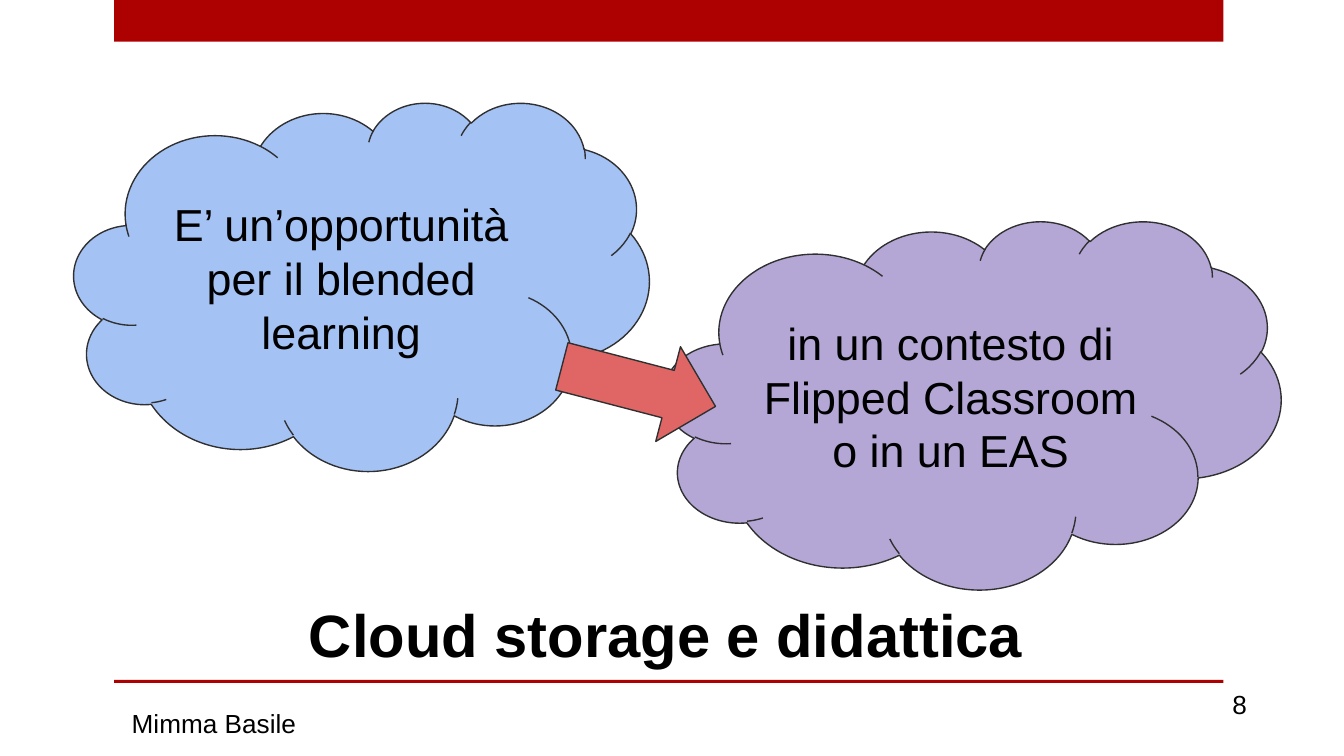
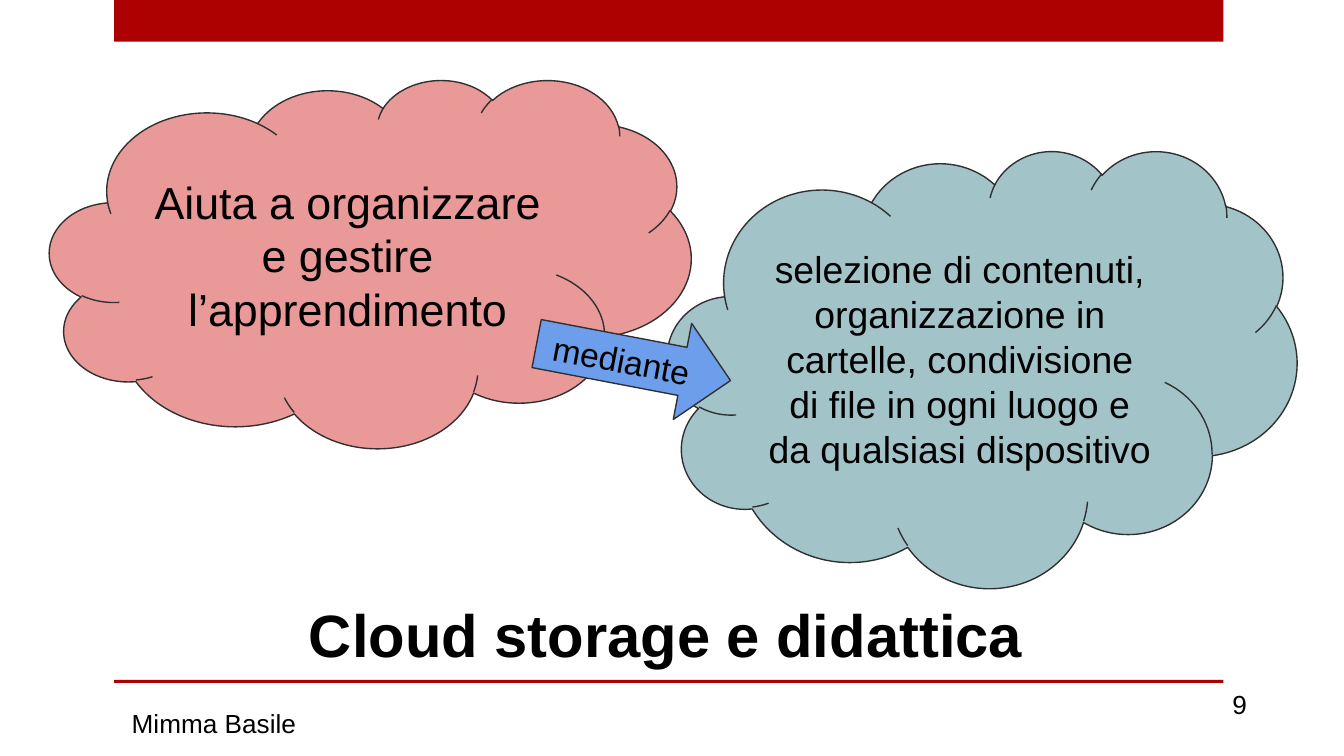
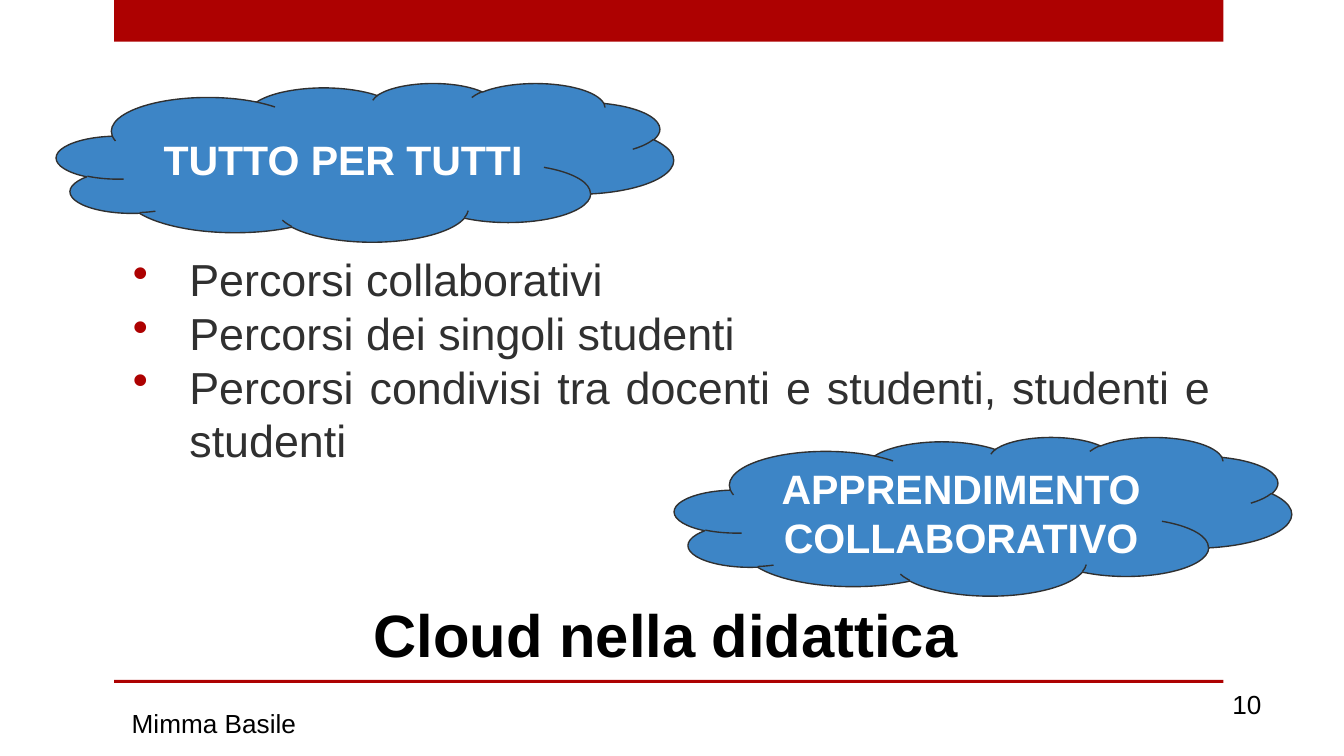
from dataclasses import dataclass

from lxml import etree
from pptx import Presentation
from pptx.dml.color import RGBColor
from pptx.enum.shapes import MSO_SHAPE
from pptx.enum.text import MSO_ANCHOR, MSO_AUTO_SIZE, PP_ALIGN
from pptx.oxml.ns import qn
from pptx.util import Cm, Pt

RECTANGLE, CLOUD, ARROW = MSO_SHAPE.RECTANGLE, MSO_SHAPE.CLOUD, MSO_SHAPE.RIGHT_ARROW
LEFT, CENTER, JUSTIFY = PP_ALIGN.LEFT, PP_ALIGN.CENTER, PP_ALIGN.JUSTIFY
TOP, MIDDLE, BOTTOM = MSO_ANCHOR.TOP, MSO_ANCHOR.MIDDLE, MSO_ANCHOR.BOTTOM


@dataclass(frozen=True)
class Theme:
    font: str = "Arial"
    accent: str = "AD0101"
    ink: str = "303030"
    black: str = "000000"
    white: str = "FFFFFF"
    light_blue: str = "A4C2F4"
    purple: str = "B4A7D6"
    red: str = "E06666"
    pink: str = "EA9999"
    teal: str = "A2C4C9"
    arrow_blue: str = "6D9EEB"
    blue: str = "3D85C6"
    title: int = 32
    large: int = 24
    medium: int = 22
    dense: int = 20
    label: int = 18
    small: int = 14
    line: float = 0.75


THEME = Theme()
AUTHOR = "Mimma Basile"
FIRST_NUMBER = 8

BAND_BOX = (2.16, 0, 20.96, 0.79)
RULE_BOX = (2.16, 12.85, 20.96, 0.06)
AUTHOR_BOX = (2.24, 13.13, 4.8, 1.14)
TITLE_BOX = (2.11, 9.53, 20.96, 3.33)
BODY_BOX = (2.11, 4.27, 20.96, 5.05)
NUMBER_BOX = (23.06, 12.93, 2.11, 0.76)

WIDE_INSET = (0.25, 0.25)
TEXT_INSET = (0.2, 0.2)
NUMBER_INSET = (0.23, 0.13)

SLIDES = [
    {
        "title": "Cloud storage e didattica",
        "clouds": [
            {"box": (1.4, 1.93, 10.87, 6.96), "fill": THEME.light_blue,
             "lines": ["E’ un’opportunità per il blended learning"]},
            {"box": (12.55, 4.17, 11.66, 6.96), "fill": THEME.purple,
             "lines": ["in un contesto di Flipped Classroom", "o in un EAS"]},
        ],
        "arrow": {"box": (10.57, 6.38, 3, 1.85), "fill": THEME.red, "angle": 14.6, "lines": []},
    },
    {
        "title": "Cloud storage e didattica",
        "clouds": [
            {"box": (0.94, 1.5, 12.12, 6.96), "fill": THEME.pink,
             "lines": ["Aiuta a organizzare e gestire l’apprendimento"]},
            {"box": (12.62, 2.84, 11.89, 8.26), "fill": THEME.teal, "size": THEME.dense,
             "lines": ["selezione di contenuti, organizzazione in cartelle, condivisione "
                       "di file in ogni luogo e da qualsiasi dispositivo"]},
        ],
        "arrow": {"box": (10.11, 5.92, 3.73, 1.85), "fill": THEME.arrow_blue, "angle": 10.8,
                  "size": THEME.label, "lines": ["mediante"]},
    },
    {
        "title": "Cloud nella didattica",
        "bullets": [
            "Percorsi collaborativi",
            "Percorsi dei singoli studenti",
            "Percorsi condivisi tra docenti e studenti, studenti e studenti",
        ],
        "clouds": [
            {"box": box, "fill": THEME.blue, "size": THEME.medium, "color": THEME.white,
             "bold": True, "lines": [text]}
            for box, text in [
                ((1.07, 1.57, 11.66, 3), "TUTTO PER TUTTI"),
                ((12.75, 8.26, 11.66, 3), "APPRENDIMENTO COLLABORATIVO"),
            ]
        ],
    },
]


def lengths(box):
    return [Cm(value) for value in box]


def add_bullet(paragraph):
    properties = paragraph._p.get_or_add_pPr()
    properties.set("marL", str(Cm(1.27)))
    properties.set("indent", str(Cm(-1.07)))
    color = etree.SubElement(properties, qn("a:buClr"))
    etree.SubElement(color, qn("a:srgbClr"), val=THEME.accent)
    etree.SubElement(properties, qn("a:buChar"), char="•")


def write(shape, lines, size, color=THEME.black, bold=False, align=LEFT, anchor=TOP,
          inset=WIDE_INSET, bulleted=False):
    frame = shape.text_frame
    frame.word_wrap = True
    frame.auto_size = MSO_AUTO_SIZE.NONE
    frame.vertical_anchor = anchor
    frame.margin_left = frame.margin_right = Cm(inset[0])
    frame.margin_top = frame.margin_bottom = Cm(inset[1])
    for index, text in enumerate(lines):
        paragraph = frame.add_paragraph() if index else frame.paragraphs[0]
        if bulleted:
            add_bullet(paragraph)
        paragraph.alignment = align
        run = paragraph.add_run()
        run.text = text
        run.font.name = THEME.font
        run.font.size = Pt(size)
        run.font.bold = bold
        run.font.color.rgb = RGBColor.from_string(color)


def add_filled(slide, kind, box, fill, outlined=True):
    shape = slide.shapes.add_shape(kind, *lengths(box))
    shape.shadow.inherit = False
    shape.fill.solid()
    shape.fill.fore_color.rgb = RGBColor.from_string(fill)
    if outlined:
        shape.line.color.rgb = RGBColor.from_string(THEME.ink)
        shape.line.width = Pt(THEME.line)
    else:
        shape.line.fill.background()
    return shape


def add_text(slide, box, lines, size, **style):
    shape = slide.shapes.add_textbox(*lengths(box))
    write(shape, lines, size, **style)
    return shape


def add_figure(slide, kind, figure):
    shape = add_filled(slide, kind, figure["box"], figure["fill"])
    shape.rotation = figure.get("angle", 0)
    write(shape, figure["lines"], figure.get("size", THEME.large),
          color=figure.get("color", THEME.black), bold=figure.get("bold", False),
          align=CENTER, anchor=MIDDLE)


def furnish_layout(layout, slide):
    shared = [add_filled(slide, RECTANGLE, box, THEME.accent, outlined=False)
              for box in (BAND_BOX, RULE_BOX)]
    shared.append(add_text(slide, AUTHOR_BOX, [AUTHOR], THEME.small))
    for shape in shared:
        layout.shapes.element.append(shape.element)


def fill_slide(slide, content, number):
    title = slide.shapes.title
    title.left, title.top, title.width, title.height = lengths(TITLE_BOX)
    write(title, [content["title"]], THEME.title, bold=True, align=CENTER,
          anchor=BOTTOM, inset=TEXT_INSET)
    if "bullets" in content:
        add_text(slide, BODY_BOX, content["bullets"], THEME.large, color=THEME.ink,
                 align=JUSTIFY, anchor=MIDDLE, inset=TEXT_INSET, bulleted=True)
    add_text(slide, NUMBER_BOX, [str(number)], THEME.small, anchor=MIDDLE, inset=NUMBER_INSET)
    for cloud in content["clouds"]:
        add_figure(slide, CLOUD, cloud)
    if "arrow" in content:
        add_figure(slide, ARROW, content["arrow"])


def main():
    presentation = Presentation()
    presentation.slide_width, presentation.slide_height = Cm(25.4), Cm(14.29)
    layout = presentation.slide_layouts.get_by_name("Title Only")
    for index, content in enumerate(SLIDES):
        slide = presentation.slides.add_slide(layout)
        if index == 0:
            furnish_layout(layout, slide)
        fill_slide(slide, content, FIRST_NUMBER + index)
    presentation.save("out.pptx")


if __name__ == "__main__":
    main()
